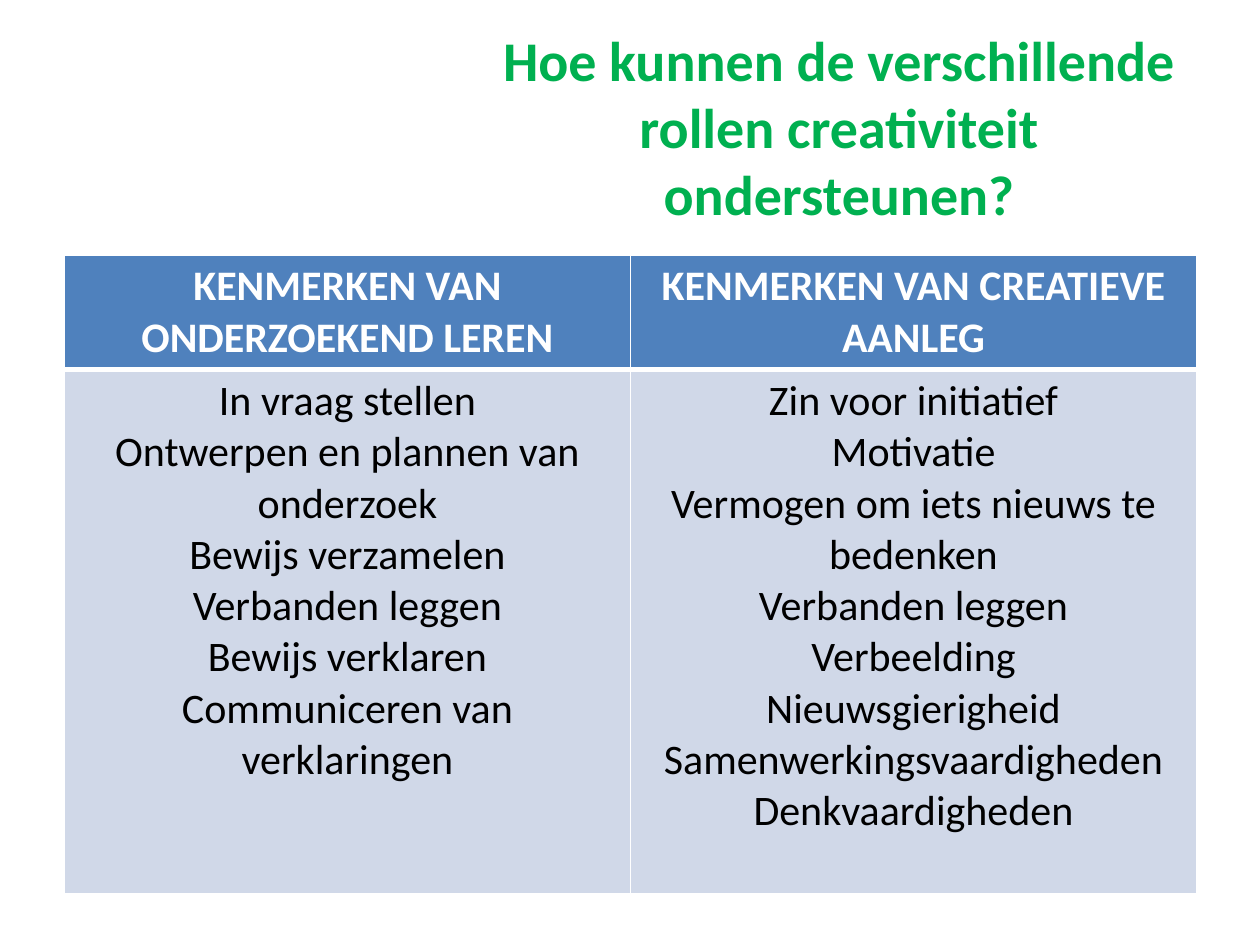
import pptx
import pptx.util
import pptx.dml.color
import pptx.enum.text
import pptx.oxml
import pptx.oxml.ns

Pt = pptx.util.Pt
CENTER = pptx.enum.text.PP_ALIGN.CENTER
MIDDLE = pptx.enum.text.MSO_ANCHOR.MIDDLE

TITLE = "Hoe kunnen de verschillende rollen creativiteit ondersteunen?"
COLUMNS = [
    ("KENMERKEN VAN ONDERZOEKEND LEREN", [
        "In vraag stellen",
        "Ontwerpen en plannen van onderzoek",
        "Bewijs verzamelen",
        "Verbanden leggen",
        "Bewijs verklaren",
        "Communiceren van verklaringen",
    ]),
    ("KENMERKEN VAN CREATIEVE AANLEG", [
        "Zin voor initiatief",
        "Motivatie",
        "Vermogen om iets nieuws te bedenken",
        "Verbanden leggen",
        "Verbeelding",
        "Nieuwsgierigheid",
        "Samenwerkingsvaardigheden",
        "Denkvaardigheden",
    ]),
]
TITLE_FONT = {"name": "Calibri", "size": Pt(32), "bold": True}
HEAD_FONT = {"name": "Calibri", "size": Pt(24), "bold": True}
BODY_FONT = {"name": "Calibri", "size": Pt(24), "bold": False}


def rgb(value):
    return pptx.dml.color.RGBColor.from_string(value)


def write(tf, lines, font, color):
    for i, line in enumerate(lines):
        p = tf.paragraphs[0] if i == 0 else tf.add_paragraph()
        p.alignment = CENTER
        r = p.add_run()
        r.text = line
        for name, value in font.items():
            setattr(r.font, name, value)
        r.font.color.rgb = rgb(color)


def set_borders(cell, widths):
    tc_pr = cell._tc.get_or_add_tcPr()
    for i, (side, width) in enumerate(widths.items()):
        tc_pr.insert(i, pptx.oxml.parse_xml(
            f'<a:ln{side} {pptx.oxml.ns.nsdecls("a")} w="{Pt(width)}">'
            '<a:solidFill><a:srgbClr val="FFFFFF"/></a:solidFill>'
            f'</a:ln{side}>'))


def add_title(s, left, top, width, height):
    sp = s.shapes.add_textbox(Pt(left), Pt(top), Pt(width), Pt(height))
    tf = sp.text_frame
    tf.word_wrap = True
    tf.vertical_anchor = MIDDLE
    write(tf, [TITLE], TITLE_FONT, "00B050")


def add_features(s, left, top, width, height, head_height):
    table = s.shapes.add_table(
        2, len(COLUMNS), Pt(left), Pt(top), Pt(width), Pt(height)).table
    table.rows[0].height = Pt(head_height)
    table.rows[1].height = Pt(height - head_height)
    for col, (head, features) in enumerate(COLUMNS):
        table.columns[col].width = Pt(width / len(COLUMNS))
        rows = [
            ([head], HEAD_FONT, "FFFFFF", "4F81BD", {"L": 1, "R": 1, "T": 1, "B": 3}),
            (features, BODY_FONT, "000000", "D0D8E8", {"L": 1, "R": 1, "T": 3, "B": 1}),
        ]
        for row, (lines, font, color, fill, borders) in enumerate(rows):
            cell = table.cell(row, col)
            cell.fill.solid()
            cell.fill.fore_color.rgb = rgb(fill)
            set_borders(cell, borders)
            write(cell.text_frame, lines, font, color)


def main():
    prs = pptx.Presentation()
    prs.slide_width, prs.slide_height = Pt(720), Pt(540)
    s = prs.slides.add_slide(prs.slide_layouts[6])
    add_title(s, 275, 21.6, 409, 100.8)
    add_features(s, 36.8, 145.6, 647, 365, 65.5)
    prs.save("out.pptx")


if __name__ == "__main__":
    main()
